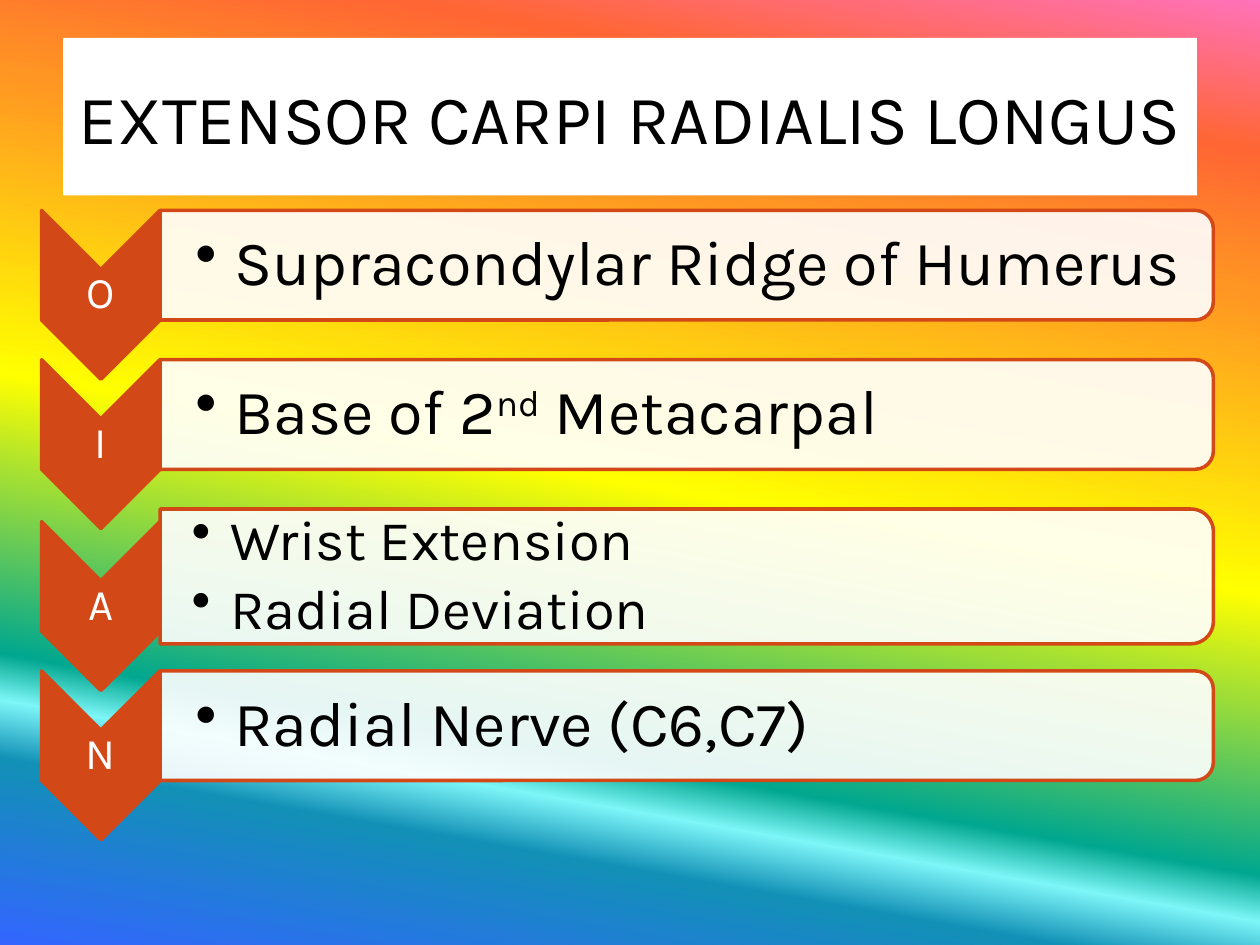
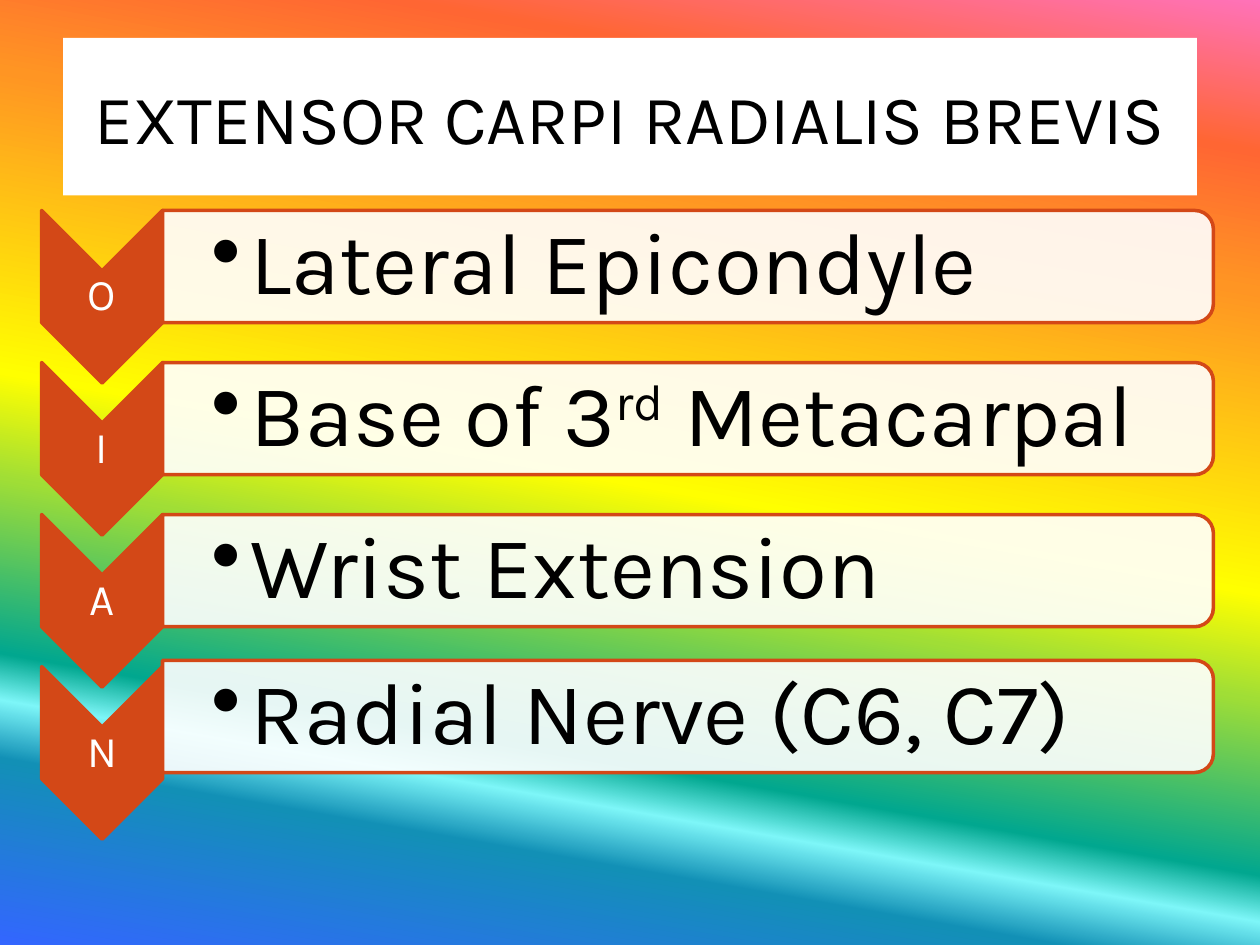
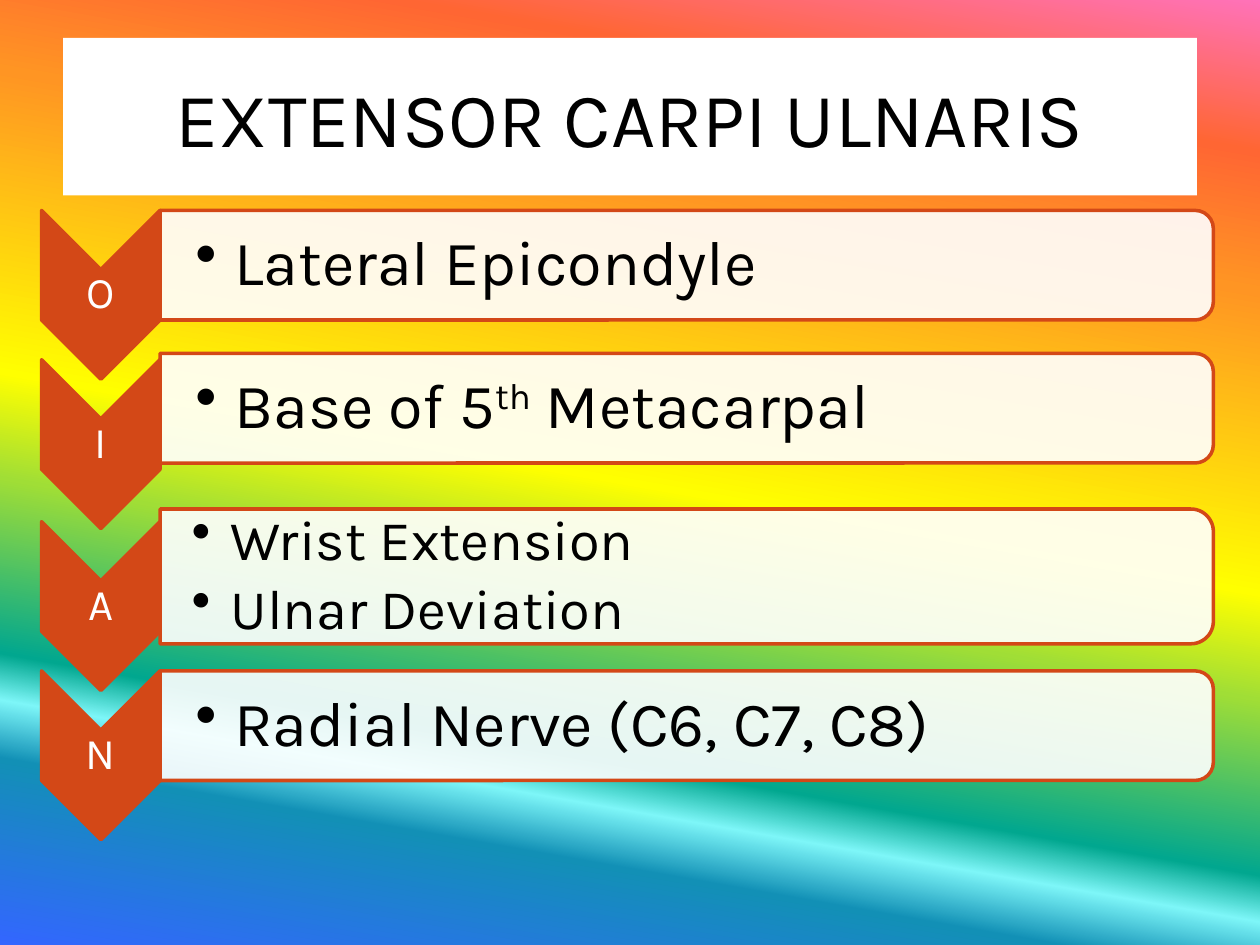
import pptx
import pptx.util
import pptx.dml.color
import pptx.enum.shapes
import pptx.enum.text
import pptx.oxml
import pptx.oxml.ns
import lxml.etree

Inches, Pt = pptx.util.Inches, pptx.util.Pt
SHAPE = pptx.enum.shapes.MSO_SHAPE
ALIGN = pptx.enum.text.PP_ALIGN
qn = pptx.oxml.ns.qn

FONT = "Karla"
COLOURS = {"accent": "D34817", "paper": "FFFFFF", "ink": "000000"}
RAINBOW = [(0, "FF72B9"), (13, "FF6633"), (25, "FF9523"), (51, "FFFF00"),
           (60, "A0DE36"), (75, "01A78F"), (79, "7DF6F8"), (84, "1290B6"),
           (100, "3366FF")]
RAINBOW_ANGLE = 100

# Lengths in inches
LEFT, RIGHT, TOP = 0.33, 9.63, 1.67
LABEL_SIZE = 25
BULLET_INDENT = 0.31
# Two sizes of the row grid
COMPACT = {"arrow": (0.94, 1.34), "panel": 0.87, "pitch": 1.185}
LARGE = {"arrow": (0.96, 1.37), "panel": 0.89, "pitch": 1.207}
TALL_PANEL = 1.07

# Each row: letter, text size, bullet lines, upward shift of the panel.
# A line is a string, or (before, superscript, after).
MUSCLES = [
    ("EXTENSOR CARPI RADIALIS LONGUS", 39.6, COMPACT, [
        ("O", 36, ["Supracondylar Ridge of Humerus"], 0),
        ("I", 36, [("Base of 2", "nd", " Metacarpal")], 0),
        ("A", 32, ["Wrist Extension", "Radial Deviation"], 0),
        ("N", 36, ["Radial Nerve (C6,C7)"], 0)]),
    ("EXTENSOR CARPI RADIALIS BREVIS", 39.6, LARGE, [
        ("O", 50, ["Lateral Epicondyle"], 0),
        ("I", 50, [("Base of 3", "rd", " Metacarpal")], 0),
        ("A", 50, ["Wrist Extension"], 0),
        ("N", 50, ["Radial Nerve (C6, C7)"], 0.05)]),
    ("EXTENSOR CARPI ULNARIS", 44, COMPACT, [
        ("O", 36, ["Lateral Epicondyle"], 0),
        ("I", 36, [("Base of 5", "th", " Metacarpal")], 0.05),
        ("A", 32, ["Wrist Extension", "Ulnar Deviation"], 0),
        ("N", 36, ["Radial Nerve (C6, C7, C8)"], 0)]),
]


def rgb(name):
    return pptx.dml.color.RGBColor.from_string(COLOURS[name])


def set_font(paragraph, size, colour):
    paragraph.font.name = FONT
    paragraph.font.size = Pt(size)
    paragraph.font.color.rgb = rgb(colour)


def paint_background(master):
    """Give all slides the rainbow gradient."""
    fill = master.background.fill
    fill.gradient()
    fill.gradient_angle = 360 - RAINBOW_ANGLE
    stops = master.element.find(".//" + qn("a:gsLst"))
    for old in list(stops):
        stops.remove(old)
    for percent, colour in RAINBOW:
        stop = lxml.etree.SubElement(stops, qn("a:gs"), pos=str(percent * 1000))
        lxml.etree.SubElement(stop, qn("a:srgbClr"), val=colour)


def add_title(slide, text, size):
    title = slide.shapes.title
    title.left, title.top = Inches(0.5), Inches(0.3)
    title.width, title.height = Inches(9), Inches(1.25)
    title.fill.solid()
    title.fill.fore_color.rgb = rgb("paper")
    frame = title.text_frame
    frame.text = text
    frame.auto_size = pptx.enum.text.MSO_AUTO_SIZE.NONE
    frame.vertical_anchor = pptx.enum.text.MSO_ANCHOR.MIDDLE
    frame.paragraphs[0].alignment = ALIGN.CENTER
    set_font(frame.paragraphs[0], size, "ink")


def add_turned(group, kind, left, top, width, height, colour, opacity=100):
    """Add a shape turned a quarter; the lengths are those seen after the turn."""
    shape = group.shapes.add_shape(
        kind, Inches(left + (width - height) / 2),
        Inches(top + (height - width) / 2), Inches(height), Inches(width))
    shape.rotation = 90
    shape.shadow.inherit = False
    shape.fill.solid()
    shape.fill.fore_color.rgb = rgb(colour)
    shape.line.color.rgb = rgb("accent")
    shape.line.width = Pt(2)
    if opacity < 100:
        colour_node = shape.fill._xPr.find(".//" + qn("a:srgbClr"))
        lxml.etree.SubElement(colour_node, qn("a:alpha"), val=str(opacity * 1000))


def add_text_frame(group, left, top, width, height, inset, inset_left):
    box = group.shapes.add_textbox(
        Inches(left), Inches(top), Inches(width), Inches(height))
    frame = box.text_frame
    frame.word_wrap = True
    frame.vertical_anchor = pptx.enum.text.MSO_ANCHOR.MIDDLE
    frame.margin_top = frame.margin_right = frame.margin_bottom = Inches(inset)
    frame.margin_left = Inches(inset_left)
    return frame


def set_spacing(paragraph, size, share_after):
    paragraph.line_spacing = 0.9
    paragraph.space_after = Pt(size * share_after)


def add_bullet(paragraph, line, size):
    parts = (line,) if isinstance(line, str) else line
    for index, part in enumerate(parts):
        run = paragraph.add_run()
        run.text = part
        if index == 1:
            run.font._element.set("baseline", "30000")
    paragraph.level = 1
    set_spacing(paragraph, size, 0.15)
    set_font(paragraph, size, "ink")
    properties = paragraph._p.get_or_add_pPr()
    properties.set("marL", str(Inches(BULLET_INDENT)))
    properties.set("indent", str(-Inches(BULLET_INDENT)))
    bullet = pptx.oxml.parse_xml(
        '<a:buChar %s char="\u2022"/>' % pptx.oxml.ns.nsdecls("a"))
    properties.insert_element_before(
        bullet, "a:tabLst", "a:defRPr", "a:extLst")


def add_arrow(group, letter, top, width, height):
    add_turned(group, SHAPE.CHEVRON, LEFT, top, width, height, "accent")
    # The letter sits between the notch and the point
    frame = add_text_frame(
        group, LEFT, top + width / 2, width, height - width, 0.02, 0.02)
    paragraph = frame.paragraphs[0]
    paragraph.text = letter
    paragraph.alignment = ALIGN.CENTER
    set_spacing(paragraph, LABEL_SIZE, 0.35)
    set_font(paragraph, LABEL_SIZE, "paper")


def add_panel(group, lines, size, left, top, height):
    width = RIGHT - left
    add_turned(group, SHAPE.ROUND_2_SAME_RECTANGLE, left, top, width, height,
               "paper", opacity=90)
    # Keep the text clear of the round corners
    corner = height * 0.05
    frame = add_text_frame(group, left, top + corner, width - corner,
                           height - 2 * corner, 0.03, size / 128)
    for index, line in enumerate(lines):
        paragraph = frame.add_paragraph() if index else frame.paragraphs[0]
        add_bullet(paragraph, line, size)


def add_rows(slide, grid, rows):
    group = slide.shapes.add_group_shape()
    arrow_width, arrow_height = grid["arrow"]
    top = TOP
    for letter, size, lines, shift in rows:
        panel_height = TALL_PANEL if len(lines) > 1 else grid["panel"]
        # A tall panel moves its arrow, and the rows below, down
        arrow_top = top + (panel_height - grid["panel"]) / 2
        add_arrow(group, letter, arrow_top, arrow_width, arrow_height)
        add_panel(group, lines, size, LEFT + arrow_width, top - shift, panel_height)
        top = arrow_top + grid["pitch"]


def main():
    deck = pptx.Presentation()
    deck.slide_width, deck.slide_height = Inches(10), Inches(7.5)
    paint_background(deck.slide_master)
    for name, title_size, grid, rows in MUSCLES:
        slide = deck.slides.add_slide(deck.slide_layouts[5])
        add_title(slide, name, title_size)
        add_rows(slide, grid, rows)
    deck.save("out.pptx")


main()
